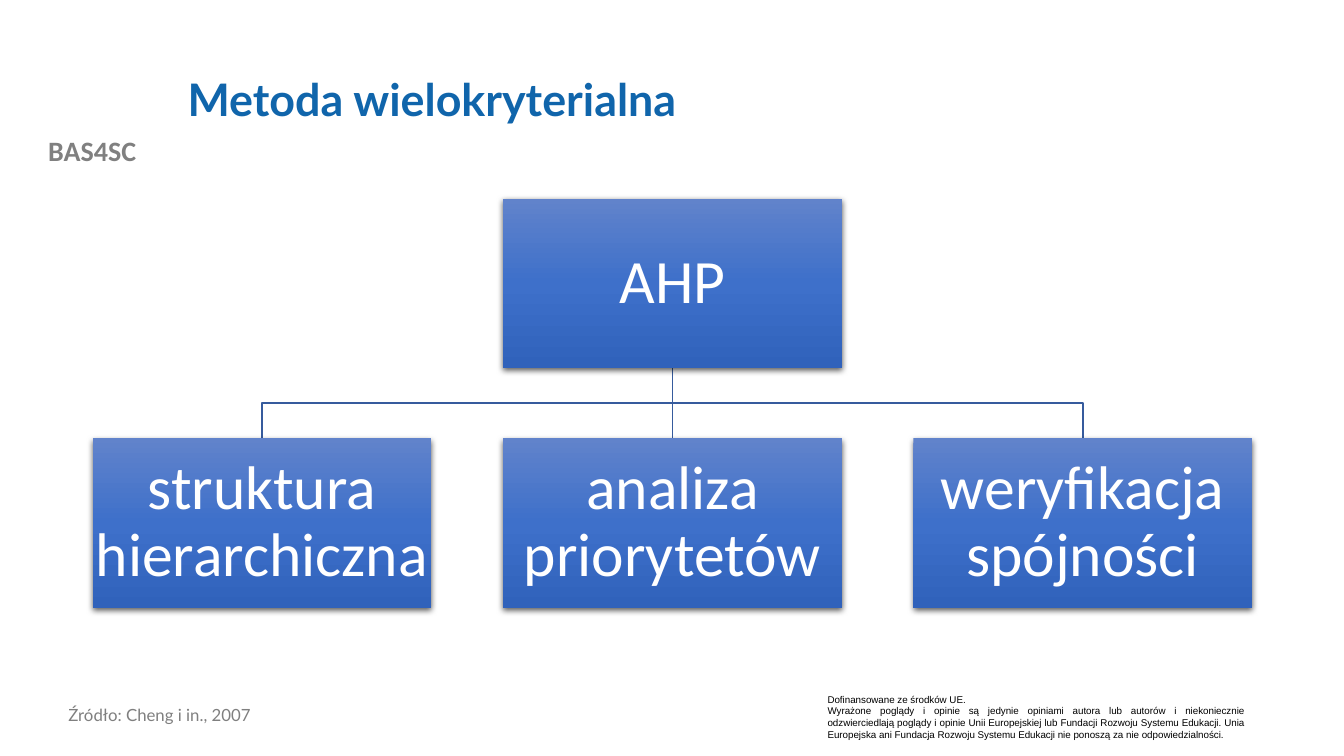
"""Build a slide showing the three parts of the AHP method."""
from lxml import etree
from pptx import Presentation
from pptx.dml.color import RGBColor
from pptx.enum import shapes, text
from pptx.util import Inches, Pt

TITLE = "Metoda wielokryterialna"
ROOT = "AHP"
PARTS = ["struktura hierarchiczna", "analiza priorytetów", "weryfikacja spójności"]
TAG = "BAS4SC"
SOURCE = "Źródło: Cheng i in., 2007"
NOTICE = [
    "Dofinansowane ze środków UE.",
    "Wyrażone poglądy i opinie są jedynie opiniami autora lub autorów i niekoniecznie "
    "odzwierciedlają poglądy i opinie Unii Europejskiej lub Fundacji Rozwoju Systemu "
    "Edukacji. Unia Europejska ani Fundacja Rozwoju Systemu Edukacji nie ponoszą za nie "
    "odpowiedzialności.",
]
STOPS = [(0, "6183CB"), (50, "3E70CA"), (100, "3062BB")]
LINE = "365B9D"
LEFT, STEP, WIDE, HIGH = 0.92, 4.07, 3.36, 1.68
TOP, LOW = 1.97, 4.35
NS = "http://schemas.openxmlformats.org/drawingml/2006/main"
ALIGN = text.PP_ALIGN


def color(code):
    return RGBColor.from_string(code)


def write(frame, lines, size, face, code, align=ALIGN.LEFT, bold=False, space=None):
    frame.word_wrap = True
    frame.text = "\n".join(lines)
    for para in frame.paragraphs:
        para.alignment = align
        para.line_spacing = space
        font = para.font
        font.size, font.name, font.bold = Pt(size), face, bold
        font.color.rgb = color(code)


def label(slide, area, *style, **more):
    box = slide.shapes.add_textbox(*map(Inches, area))
    write(box.text_frame, *style, **more)


def join(slide, start, end):
    first, last, high, low = map(Inches, (start, end, TOP + HIGH, LOW))
    middle = (high + low) // 2
    side = Inches(0.05) if first == last else 0
    path = slide.shapes.build_freeform(first - side, high)
    if side:
        path.move_to(first + side, high)
        path.move_to(first, high)
    path.add_line_segments([(first, middle), (last, middle), (last, low)], close=False)
    link = path.convert_to_shape()
    link.fill.background()
    link.shadow.inherit = False
    link.line.color.rgb = color(LINE)
    link.line.width = Pt(1)


def card(slide, left, top, words):
    box = slide.shapes.add_shape(
        shapes.MSO_SHAPE.RECTANGLE, *map(Inches, (left, top, WIDE, HIGH)))
    box.line.fill.background()
    stops = "".join(f'<a:gs pos="{pos * 1000}"><a:srgbClr val="{code}"/></a:gs>'
                    for pos, code in STOPS)
    grad = (f'<a:gradFill xmlns:a="{NS}" rotWithShape="1"><a:gsLst>{stops}</a:gsLst>'
            '<a:lin ang="5400000" scaled="0"/></a:gradFill>')
    glow = (f'<a:effectLst xmlns:a="{NS}"><a:outerShdw blurRad="{Pt(4.5)}" '
            f'dist="{Pt(1.5)}" dir="5400000" algn="ctr" rotWithShape="0">'
            '<a:srgbClr val="000000"><a:alpha val="63000"/></a:srgbClr>'
            '</a:outerShdw></a:effectLst>')
    props = box._element.spPr
    props.insert(2, etree.fromstring(grad))
    props.append(etree.fromstring(glow))
    frame = box.text_frame
    frame.margin_left = frame.margin_right = Inches(0.03)
    frame.margin_top = frame.margin_bottom = Inches(0.03)
    frame.vertical_anchor = text.MSO_ANCHOR.MIDDLE
    write(frame, [words], 44, "Calibri", "FFFFFF", ALIGN.CENTER, space=0.9)


def main():
    deck = Presentation()
    deck.slide_width, deck.slide_height = Inches(13.33), Inches(7.5)
    slide = deck.slides.add_slide(deck.slide_layouts[5])

    title = slide.shapes.title
    title.left, title.top, title.width, title.height = map(
        Inches, (1.76, 0.4, 10.66, 1.22))
    title.text_frame.vertical_anchor = text.MSO_ANCHOR.MIDDLE
    write(title.text_frame, [TITLE], 32, "Lato", "1065AB", bold=True, space=0.9)

    label(slide, (0, 1.28, 1.83, 0.44), [TAG], 20, "Calibri", "808080",
          ALIGN.CENTER, bold=True)
    label(slide, (8.11, 6.83, 4.33, 0.57), NOTICE, 7, "Arial", "000000", ALIGN.JUSTIFY)
    label(slide, (0.58, 6.96, 5.9, 0.35), [SOURCE], 12, "Lato", "7F7F7F", space=0.9)

    lefts = [LEFT + STEP * col for col in range(len(PARTS))]
    hub = lefts[1]
    for left in reversed(lefts):
        join(slide, hub + WIDE / 2, left + WIDE / 2)
    card(slide, hub, TOP, ROOT)
    for left, words in zip(lefts, PARTS):
        card(slide, left, LOW, words)
    deck.save("out.pptx")


if __name__ == "__main__":
    main()
